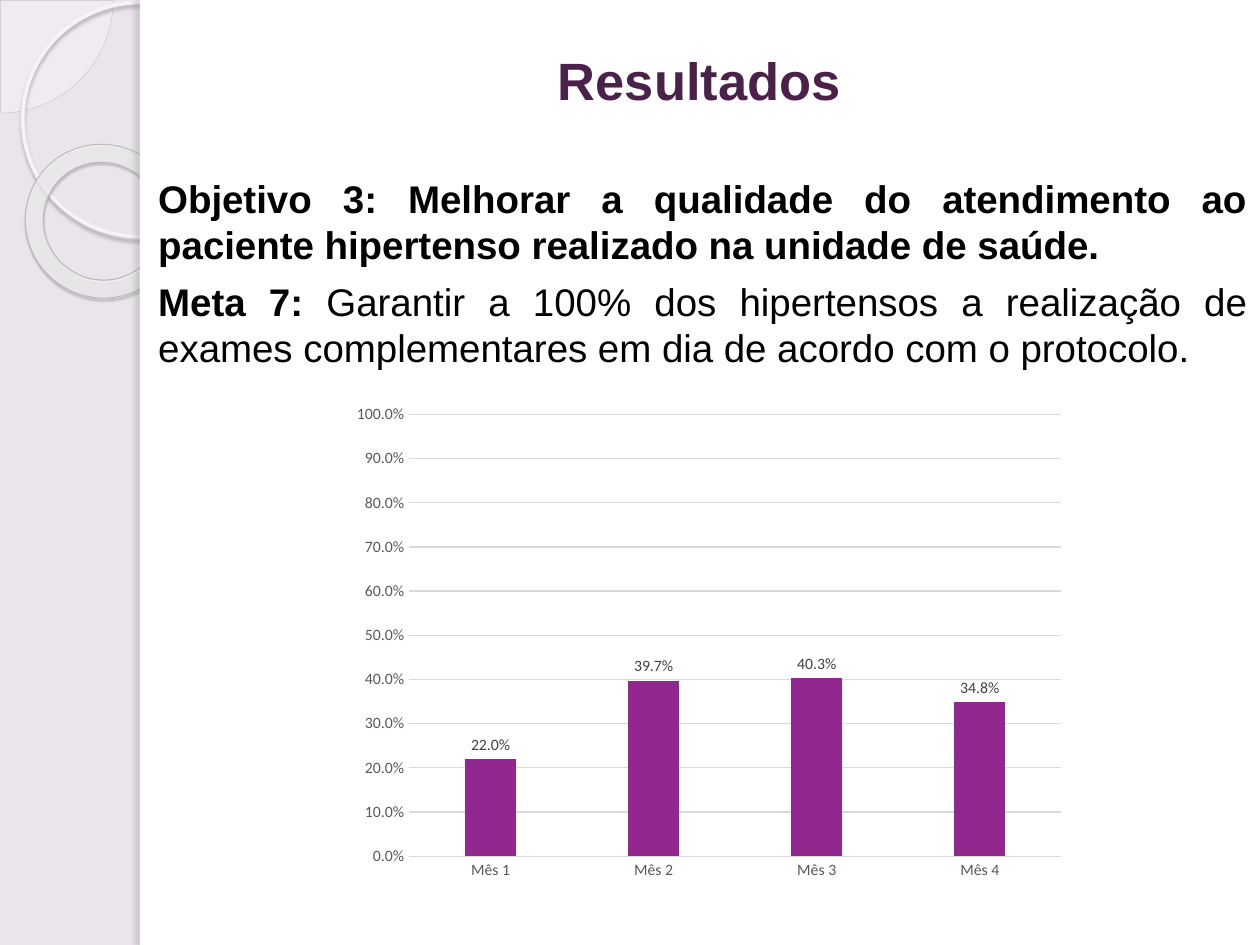
from lxml import etree
from pptx import Presentation
from pptx.chart.data import CategoryChartData
from pptx.dml.color import RGBColor
from pptx.enum.chart import XL_CHART_TYPE, XL_LABEL_POSITION, XL_TICK_MARK
from pptx.enum.shapes import MSO_SHAPE
from pptx.enum.text import MSO_ANCHOR, PP_ALIGN
from pptx.oxml import parse_xml
from pptx.oxml.ns import qn
from pptx.util import Cm, Pt

LILAC = RGBColor(0xEA, 0xE5, 0xEB)
PALE = RGBColor(0xFC, 0xFA, 0xFC)
MAUVE = RGBColor(0xCA, 0xC2, 0xCC)
GLOW = RGBColor(0xF8, 0xF1, 0xF9)
RIM = RGBColor(0xBD, 0xB5, 0xBF)
WHITE = RGBColor(0xFF, 0xFF, 0xFF)
BLACK = RGBColor(0, 0, 0)
PLUM = RGBColor(0x4A, 0x22, 0x49)
PURPLE = RGBColor(0x92, 0x27, 0x8F)
GRID = RGBColor(0xD9, 0xD9, 0xD9)
GREY = RGBColor(0x59, 0x59, 0x59)
DARK = RGBColor(0x40, 0x40, 0x40)
SPACE = "http://schemas.openxmlformats.org/drawingml/2006/main"

deck = Presentation()
deck.slide_width, deck.slide_height = Cm(25.4), Cm(19.05)
slide = deck.slides.add_slide(deck.slide_layouts[5])
slide.background.fill.solid()
slide.background.fill.fore_color.rgb = LILAC


def add_part(kind, box, fill=None, line=None, width=0, shade=None):
    """Add a shape; shade is colour, opacity %, blur, distance, angle."""
    part = slide.shapes.add_shape(kind, *[Cm(n) for n in box])
    part.shadow.inherit = False
    if fill is None:
        part.fill.background()
    else:
        part.fill.solid()
        part.fill.fore_color.rgb = fill
    if line is None:
        part.line.fill.background()
    else:
        part.line.color.rgb = line
        part.line.width = Pt(width)
    if shade:
        tone, alpha, blur, dist, angle = shade
        part.element.spPr.find(qn("a:effectLst")).append(parse_xml(
            f'<a:outerShdw xmlns:a="{SPACE}" blurRad="{Pt(blur)}" '
            f'dist="{Pt(dist)}" dir="{angle * 60000}" algn="tl" '
            f'rotWithShape="0"><a:srgbClr val="{tone}">'
            f'<a:alpha val="{alpha * 1000}"/></a:srgbClr></a:outerShdw>'))
    return part


def set_font(font, name, size, color, bold=False):
    font.name, font.size, font.bold = name, Pt(size), bold
    font.color.rgb = color


# Side band
pie = add_part(MSO_SHAPE.PIE, (-2.26, -2.26, 4.54, 4.54), PALE, MAUVE, 0.25)
pie.adjustments[0] = 0
pie.adjustments[1] = 54  # a quarter turn
tint = pie.element.spPr.find(qn("a:solidFill"))[0]
etree.SubElement(tint, qn("a:alpha"), val="33000")

add_part(MSO_SHAPE.OVAL, (0.46, 0.05, 4.72, 4.72), None, GLOW, 2.15,
         ("AEA8AF", 85, 2, 2, 90))

ring = add_part(MSO_SHAPE.DONUT, (0.5, 2.92, 3.13, 3.08), WHITE, RIM, 0.58,
                ("575357", 35, 1, 1.2, 75))
ring.rotation = 38.6
ring.adjustments[0] = 0.118
stops = "".join(
    f'<a:gs pos="{pos * 1000}"><a:srgbClr val="{tone}">'
    f'<a:alpha val="{alpha * 1000}"/></a:srgbClr></a:gs>'
    for pos, tone, alpha in [(0, "FCFBFD", 70), (70, "FEFDFE", 55),
                             (100, "D3C3D7", 60)])
props = ring.element.spPr
props.replace(props.find(qn("a:solidFill")), parse_xml(
    f'<a:gradFill xmlns:a="{SPACE}" rotWithShape="1"><a:gsLst>{stops}'
    '</a:gsLst><a:path path="circle"><a:fillToRect l="-408000" t="-50000" '
    'r="508000" b="150000"/></a:path></a:gradFill>'))

# White page and its shaded edge
add_part(MSO_SHAPE.RECTANGLE, (2.82, 0, 22.58, 19.05), WHITE)
add_part(MSO_SHAPE.RECTANGLE, (2.82, 0, 0.2, 19.05), WHITE,
         shade=("747275", 25, 3, 3, 180))

# Title, brought in front of the page
title = slide.shapes.title
slide.shapes.element.append(title.element)
title.left, title.top, title.width, title.height = (
    Cm(2.8), Cm(0), Cm(22.6), Cm(3.22))
title.text_frame.vertical_anchor = MSO_ANCHOR.MIDDLE
para = title.text_frame.paragraphs[0]
para.alignment = PP_ALIGN.CENTER
run = para.add_run()
run.text = "Resultados"
set_font(run.font, "Arial", 30, PLUM, True)

# Goal text
goals = [
    [("Objetivo 3: Melhorar a qualidade do atendimento ao paciente "
      "hipertenso realizado na unidade de saúde.", True)],
    [("Meta 7: ", True),
     ("Garantir a 100% dos hipertensos a realização de exames "
      "complementares em dia de acordo com o protocolo.", False)],
]
frame = slide.shapes.add_textbox(
    Cm(2.94), Cm(3.4), Cm(22.46), Cm(4.5)).text_frame
frame.word_wrap = True
for num, goal in enumerate(goals):
    para = frame.add_paragraph() if num else frame.paragraphs[0]
    para.alignment = PP_ALIGN.JUSTIFY
    para.space_after = Pt(6)
    for text, bold in goal:
        run = para.add_run()
        run.text = text
        set_font(run.font, "Arial", 22, BLACK, bold)

# Chart
data = CategoryChartData(number_format="0.0%")
data.categories = [f"Mês {n}" for n in range(1, 5)]
data.add_series("Series 1", (0.22, 0.397, 0.403, 0.348))
chart = slide.shapes.add_chart(
    XL_CHART_TYPE.COLUMN_CLUSTERED,
    Cm(6.9), Cm(7.97), Cm(14.79), Cm(9.96), data).chart
chart.has_legend = False
chart.has_title = False
set_font(chart.font, "Calibri", 10, BLACK)

for axis in (chart.category_axis, chart.value_axis):
    axis.major_tick_mark = axis.minor_tick_mark = XL_TICK_MARK.NONE
    set_font(axis.tick_labels.font, "Calibri", 9, GREY)
months, rates = chart.category_axis, chart.value_axis
rates.minimum_scale, rates.maximum_scale, rates.major_unit = 0, 1, 0.1
rates.tick_labels.number_format = "0.0%"
rates.tick_labels.number_format_is_linked = False
rates.format.line.fill.background()
for line in (months.format.line, rates.major_gridlines.format.line):
    line.color.rgb = GRID
    line.width = Pt(0.75)

plot = chart.plots[0]
plot.gap_width, plot.overlap = 219, -27
plot.vary_by_categories = False
bars = plot.series[0]
bars.format.fill.solid()
bars.format.fill.fore_color.rgb = PURPLE
tags = bars.data_labels
tags.show_value = True
tags.position = XL_LABEL_POSITION.OUTSIDE_END
tags.number_format = "0.0%"
tags.number_format_is_linked = False
set_font(tags.font, "Calibri", 9, DARK)

deck.save("out.pptx")
